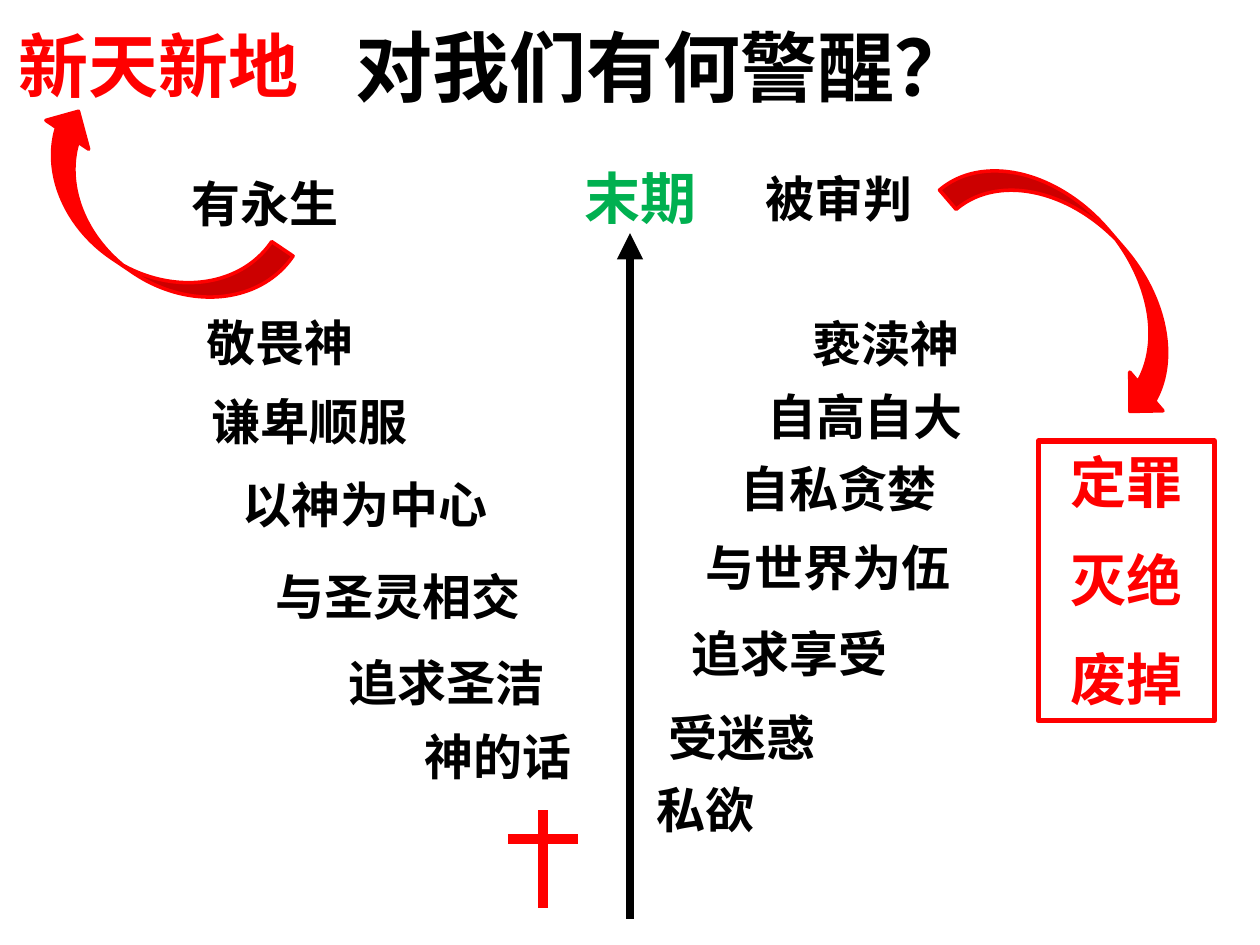
from lxml import etree
from pptx import Presentation
from pptx.dml.color import RGBColor
from pptx.enum import shapes, text
from pptx.oxml.ns import qn
from pptx.util import Inches, Pt

COLORS = {"black": "000000", "red": "FF0000", "green": "00B050"}
CJK = "Noto Sans CJK SC"

# Content: (text, left, top, width)
GODLY_PATH = [
    ("神的话", 3.27, 5.72, 1.52),
    ("追求圣洁", 2.67, 5.13, 1.92),
    ("与圣灵相交", 2.09, 4.45, 2.45),
    ("以神为中心", 1.83, 3.72, 2.2),
    ("谦卑顺服", 1.58, 3.06, 2.2),
    ("敬畏神", 1.54, 2.43, 2.2),
    ("有永生", 1.42, 1.33, 2.2),
]
WORLDLY_PATH = [
    ("私欲", 5.11, 6.14, 1.25),
    ("受迷惑", 5.21, 5.57, 1.67),
    ("追求享受", 5.39, 4.9, 1.92),
    ("与世界为伍", 5.5, 4.22, 2.45),
    ("自私贪婪", 5.78, 3.59, 2.2),
    ("自高自大", 5.99, 3.02, 2.2),
    ("亵渎神", 6.35, 2.44, 2.2),
    ("被审判", 5.98, 1.29, 2.2),
]
JUDGMENT = ["定罪", "灭绝", "废掉"]
# left, top, width, height, rotation
CURVED_ARROWS = [
    (8.18, 0.94, 0.81, 2.52, 319.3),
    (0.75, 0.61, 0.82, 2.26, 124),
]
# from x, from y, to x, to y, colour, width
TIMELINE = (5, 7.29, 5, 1.85, "black", 5)
CROSS = [
    (4.31, 6.43, 4.31, 7.21, "red", 6),
    (4.03, 6.66, 4.59, 6.66, "red", 6),
]

prs = Presentation()
prs.slide_width, prs.slide_height = Inches(10), Inches(7.5)
s = prs.slides.add_slide(prs.slide_layouts[6])


def rgb(name):
    return RGBColor.from_string(COLORS[name])


def write(sp, lines, size, color, align=text.PP_ALIGN.LEFT, after=18, font="Calibri"):
    tf = sp.text_frame
    tf.word_wrap = True
    tf.vertical_anchor = text.MSO_ANCHOR.TOP
    tf.text = "\n".join(lines)
    for p in tf.paragraphs:
        p.alignment = align
        p.space_after = Pt(after)
        p.font.size, p.font.bold, p.font.name = Pt(size), True, font
        p.font.color.rgb = rgb(color)
        props = p._p.pPr.find(qn("a:defRPr"))
        etree.SubElement(props, qn("a:ea")).set("typeface", CJK)
    return tf


def label(words, x, y, w, h=0.57, size=28, color="black", **style):
    sp = s.shapes.add_textbox(Inches(x), Inches(y), Inches(w), Inches(h))
    return write(sp, [words], size, color, **style)


def line(x1, y1, x2, y2, color, width):
    c = s.shapes.add_connector(shapes.MSO_CONNECTOR.STRAIGHT,
                               Inches(x1), Inches(y1), Inches(x2), Inches(y2))
    c.line.color.rgb, c.line.width = rgb(color), Pt(width)
    etree.SubElement(c._element.spPr, qn("a:effectLst"))
    return c


def red_shape(kind, x, y, w, h, width):
    sp = s.shapes.add_shape(kind, Inches(x), Inches(y), Inches(w), Inches(h))
    sp.shadow.inherit = False
    sp.line.color.rgb, sp.line.width = rgb("red"), Pt(width)
    return sp


# Timeline with its arrowhead, and the cross
axis = line(*TIMELINE)
etree.SubElement(axis.line._get_or_add_ln(), qn("a:tailEnd")).set("type", "triangle")
for bar in CROSS:
    line(*bar)

# Headings; the title is centred clear of the red heading on its left
title = label("对我们有何警醒？", 0.29, 0, 9, 1.05, 44,
              align=text.PP_ALIGN.CENTER, after=0, font=CJK)
title.vertical_anchor = text.MSO_ANCHOR.MIDDLE
title.margin_left = Inches(1.06)
label("末期", 4.54, 1.25, 1.2, 0.64, 32, "green", after=0)
label("新天新地", 0.05, 0.13, 2.48, 0.77, 40, "red")

# The two paths
for step in GODLY_PATH + WORLDLY_PATH:
    label(*step)

# Curved arrows to each outcome
for *box, angle in CURVED_ARROWS:
    arrow = red_shape(shapes.MSO_SHAPE.CURVED_LEFT_ARROW, *box, 2)
    arrow.fill.solid()
    arrow.fill.fore_color.rgb = rgb("red")
    arrow.rotation = angle

# Judgment box
frame = red_shape(shapes.MSO_SHAPE.RECTANGLE, 8.24, 3.5, 1.4, 2.22, 3)
frame.fill.background()
write(frame, JUDGMENT, 32, "red", text.PP_ALIGN.CENTER)

prs.save("out.pptx")
